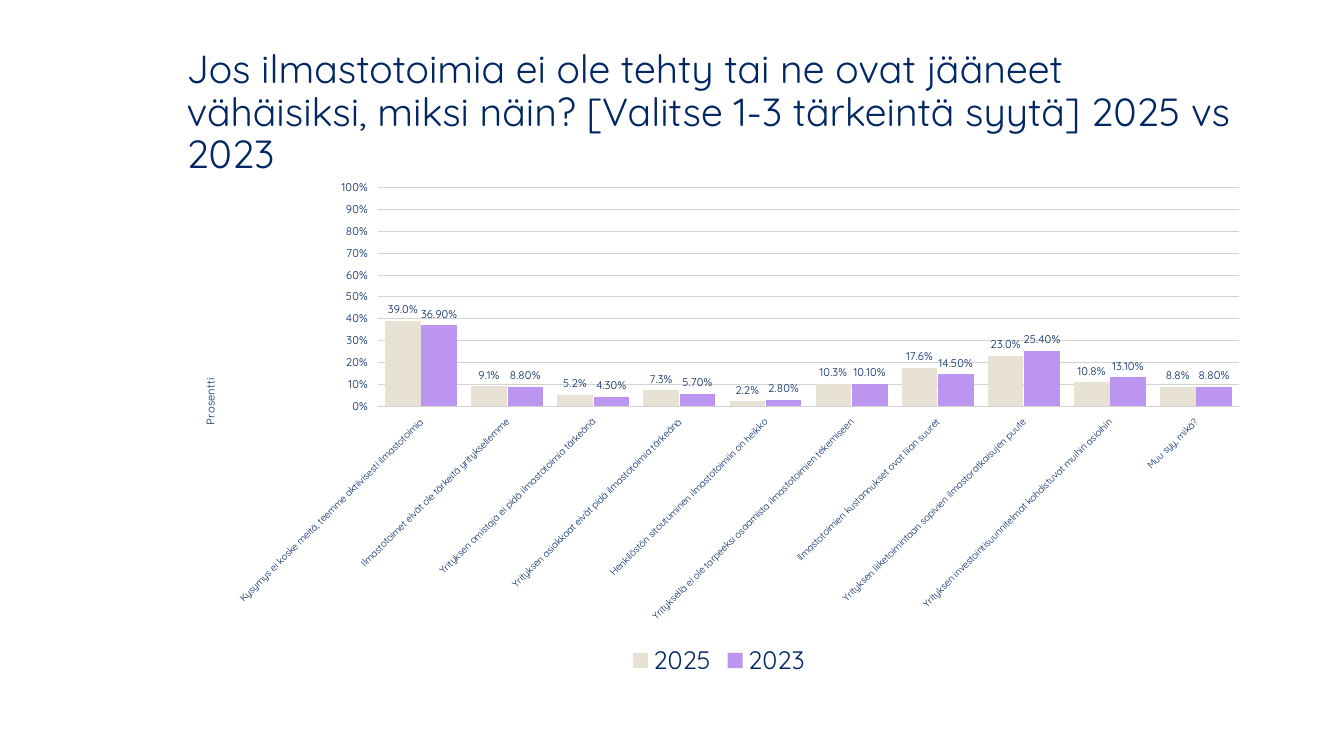
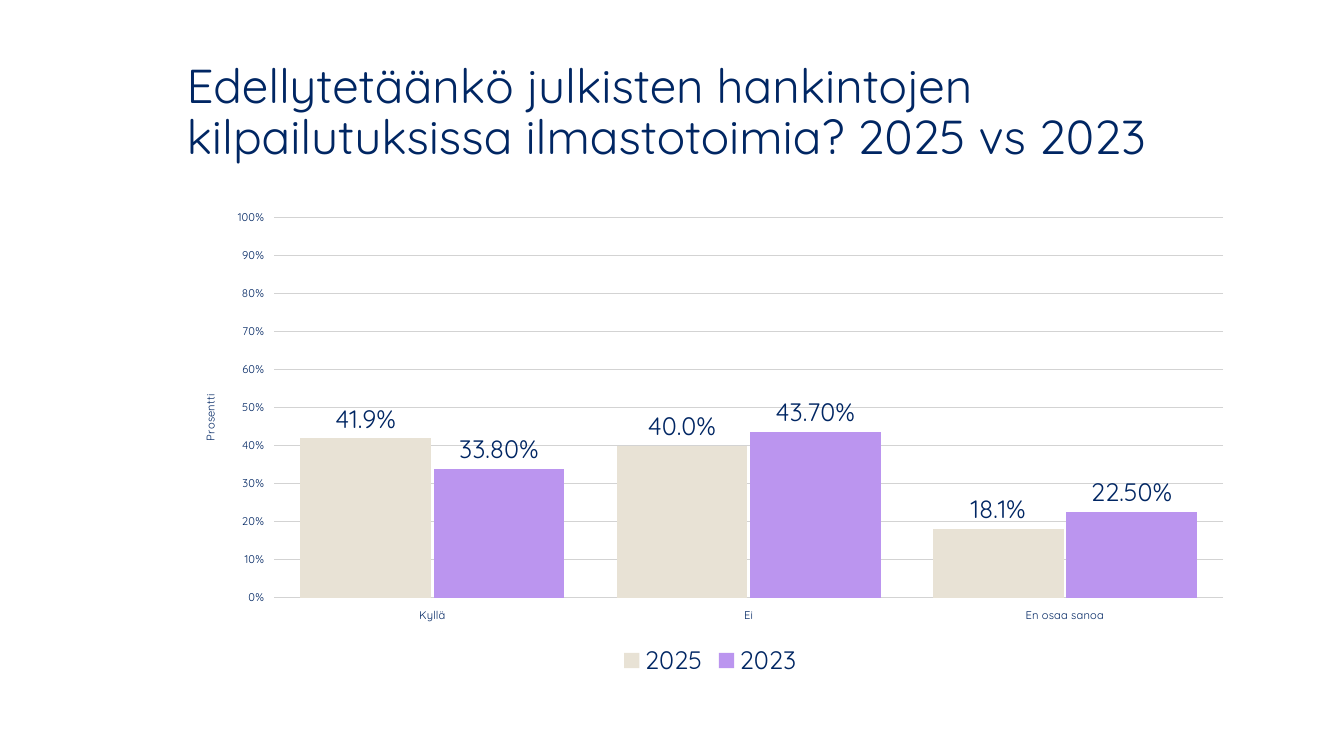
from dataclasses import dataclass
from lxml.etree import SubElement as Sub
from pptx import Presentation
from pptx.chart.data import CategoryChartData as Data
from pptx.dml.color import RGBColor as RGB
from pptx.enum.chart import XL_CHART_TYPE as Kind
from pptx.enum.chart import XL_LABEL_POSITION as Spot
from pptx.enum.chart import XL_LEGEND_POSITION as Side
from pptx.enum.chart import XL_TICK_MARK as Tick
from pptx.enum.text import MSO_ANCHOR as Anchor
from pptx.enum.text import MSO_AUTO_SIZE as Fit
from pptx.enum.text import PP_ALIGN as Align
from pptx.oxml.ns import qn
from pptx.util import Inches, Pt


@dataclass(frozen=True)
class Theme:
    face: str = "Quicksand"
    ink: str = "002663"
    grid: str = "D3D3D3"
    fills: tuple = ("E8E2D5", "BB95EF")
    forms: tuple = ("0.0%", "0.00%")
    base: int = 18
    small: int = 8
    tiny: int = 7


T = Theme()
SIZE = (13.33, 7.5)
HEAD = (1.75, 0.4, 10.59, 1.45)
YEARS = ("2025", "2023")
UNIT = "Prosentti"

PAGES = [
    {
        "title": "Jos ilmastotoimia ei ole tehty tai ne ovat jääneet vähäisiksi, "
                 "miksi näin? [Valitse 1-3 tärkeintä syytä] 2025 vs 2023",
        "size": 28,
        "box": (1.75, 1.69, 10.76, 5.07),
        "plot": (3.75, 1.86, 8.54, 2.17),
        "unit": (1.98, 3.73),
        "cat": T.tiny,
        "label": T.small,
        "turn": -45,
        "rows": [
            ("Kysymys ei koske meitä, teemme aktiivisesti ilmastotoimia", 0.39, 0.369),
            ("Ilmastotoimet eivät ole tärkeitä yrityksellemme", 0.091, 0.088),
            ("Yrityksen omistaja ei pidä ilmastotoimia tärkeänä", 0.052, 0.043),
            ("Yrityksen asiakkaat eivät pidä ilmastotoimia tärkeänä", 0.073, 0.057),
            ("Henkilöstön sitoutuminen ilmastotoimiin on heikko", 0.022, 0.028),
            ("Yrityksellä ei ole tarpeeksi osaamista ilmastotoimien tekemiseen", 0.103, 0.101),
            ("Ilmastotoimien kustannukset ovat liian suuret", 0.176, 0.145),
            ("Yrityksen liiketoimintaan sopivien ilmastoratkaisujen puute", 0.23, 0.254),
            ("Yrityksen investointisuunnitelmat kohdistuvat muihin asioihin", 0.108, 0.131),
            ("Muu syy, mikä?", 0.088, 0.088),
        ],
    },
    {
        "title": "Edellytetäänkö julkisten hankintojen kilpailutuksissa "
                 "ilmastotoimia? 2025 vs 2023",
        "size": 34,
        "box": (1.75, 2, 10.59, 4.76),
        "plot": (2.72, 2.16, 9.41, 3.77),
        "unit": (1.98, 3.89),
        "cat": T.small,
        "label": T.base,
        "turn": 0,
        "rows": [
            ("Kyllä", 0.419, 0.338),
            ("Ei", 0.4, 0.437),
            ("En osaa sanoa", 0.181, 0.225),
        ],
    },
]


def put(obj, **vals):
    for key, val in vals.items():
        setattr(obj, key, val)


def ink(font, size):
    put(font, name=T.face, size=Pt(size), bold=False)
    font.color.rgb = RGB.from_string(T.ink)


def place(part, at, box, index):
    for old in part.findall(qn("c:layout")):
        part.remove(old)
    lay = Sub(part, qn("c:layout"))
    part.insert(index, lay)
    man = Sub(lay, qn("c:manualLayout"))
    if len(at) == 4:
        Sub(man, qn("c:layoutTarget"), val="inner")
    names = "xywh"[:len(at)]
    for name in names[:2]:
        Sub(man, qn(f"c:{name}Mode"), val="edge")
    left, top, wide, high = box
    parts = zip(names, at, (left, top, 0, 0), (wide, high) * 2)
    for name, val, start, span in parts:
        Sub(man, qn(f"c:{name}"), val=f"{(val - start) / span:.4f}")


def turn(part, angle):
    body = next(part.iter(qn("a:bodyPr")))
    body.set("rot", str(angle * 60000))
    body.set("vert", "horz")


def axes(chart, page):
    cat, val = chart.category_axis, chart.value_axis
    for axis, size in ((cat, page["cat"]), (val, T.small)):
        ink(axis.tick_labels.font, size)
        axis.format.line.fill.background()
        axis.major_tick_mark = Tick.OUTSIDE
    turn(cat._element.find(qn("c:txPr")), page["turn"])
    put(val, minimum_scale=0, maximum_scale=1, major_unit=0.1)
    put(val.tick_labels, number_format="0%", number_format_is_linked=False)
    line = val.major_gridlines.format.line
    line.width = Pt(0.5)
    line.color.rgb = RGB.from_string(T.grid)
    frame = val.axis_title.text_frame
    frame.text = UNIT
    ink(frame.paragraphs[0].runs[0].font, T.small)
    name = val._element.find(qn("c:title"))
    turn(name, -90)
    place(name, page["unit"], page["box"], 1)


def bars(chart, size):
    plot = chart.plots[0]
    put(plot, gap_width=40, overlap=-2, vary_by_categories=False)
    for row, fill, form in zip(plot.series, T.fills, T.forms):
        row.format.fill.solid()
        row.format.fill.fore_color.rgb = RGB.from_string(fill)
        tags = row.data_labels
        put(tags, show_value=True, position=Spot.OUTSIDE_END,
            number_format=form, number_format_is_linked=False)
        ink(tags.font, size)


def graph(slide, page):
    cats, *cols = zip(*page["rows"])
    data = Data()
    data.categories = cats
    for year, vals in zip(YEARS, cols):
        data.add_series(year, vals)
    box = map(Inches, page["box"])
    chart = slide.shapes.add_chart(Kind.COLUMN_CLUSTERED, *box, data).chart
    ink(chart.font, T.base)
    put(chart, has_title=False, has_legend=True)
    put(chart.legend, position=Side.BOTTOM, include_in_layout=False)
    ink(chart.legend.font, T.base)
    axes(chart, page)
    bars(chart, page["label"])
    area = next(chart._chartSpace.iter(qn("c:plotArea")))
    place(area, page["plot"], page["box"], 0)


def head(slide, page):
    shape = slide.shapes.title
    keys = ("left", "top", "width", "height")
    put(shape, **dict(zip(keys, map(Inches, HEAD))))
    frame = shape.text_frame
    frame.text = page["title"]
    put(frame, word_wrap=True, auto_size=Fit.NONE, vertical_anchor=Anchor.MIDDLE)
    para = frame.paragraphs[0]
    put(para, alignment=Align.LEFT, line_spacing=0.9)
    ink(para.runs[0].font, page["size"])


def main():
    deck = Presentation()
    deck.slide_width, deck.slide_height = map(Inches, SIZE)
    for page in PAGES:
        slide = deck.slides.add_slide(deck.slide_layouts[5])
        head(slide, page)
        graph(slide, page)
    deck.save("out.pptx")


if __name__ == "__main__":
    main()
